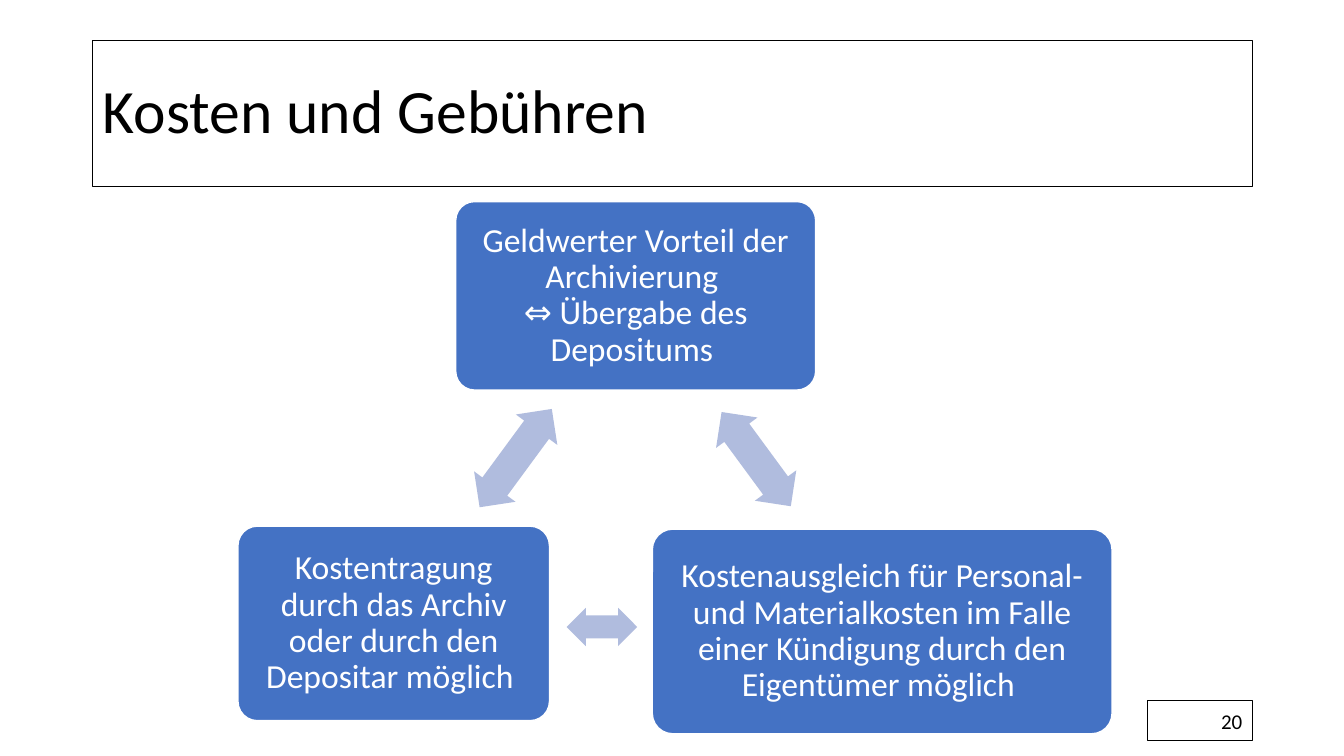
from lxml import etree
from pptx import Presentation
from pptx import util as u
from pptx.dml.color import RGBColor
from pptx.enum import shapes, text
from pptx.oxml import ns

PX = 9144
BLACK = RGBColor(0x00, 0x00, 0x00)
WHITE = RGBColor(0xFF, 0xFF, 0xFF)
BLUE = RGBColor(0x44, 0x72, 0xC4)
PALE_BLUE = RGBColor(0xB0, 0xBC, 0xDE)
FONT = "Calibri"

TOPICS = [
    ((452, 200, 357, 187),
     "Geldwerter Vorteil der Archivierung \v⇔ Übergabe des Depositums "),
    ((647, 525, 456, 203),
     "Kostenausgleich für Personal- und Materialkosten im Falle "
     "einer Kündigung durch den Eigentümer möglich "),
    ((236, 522, 309, 193),
     "Kostentragung durch das Archiv oder durch den Depositar möglich "),
]
ARROWS = [
    ((692, 430, 116, 51), 53.7),
    ((562, 603, 70, 38), 180),
    ((451, 429, 121, 51), 306.3),
]


def px(*lengths):
    return [u.Emu(length * PX) for length in lengths]


def place(shape, box):
    shape.left, shape.top, shape.width, shape.height = px(*box)


def set_text(shape, content, size, color, align, line_spacing=1.0, after=0, inset=None):
    frame = shape.text_frame
    frame.word_wrap = True
    frame.auto_size = text.MSO_AUTO_SIZE.NONE
    frame.vertical_anchor = text.MSO_ANCHOR.MIDDLE
    if inset is not None:
        (margin,) = px(inset)
        frame.margin_left = frame.margin_right = margin
        frame.margin_top = frame.margin_bottom = margin
    paragraph = frame.paragraphs[0]
    paragraph.text = content
    paragraph.alignment = align
    paragraph.line_spacing = line_spacing
    paragraph.space_after = u.Pt(after)
    for run in paragraph.runs:
        run.font.name = FONT
        run.font.size = u.Pt(size)
        run.font.color.rgb = color


def style_frame(shape, line_width):
    shape.fill.solid()
    shape.fill.fore_color.rgb = WHITE
    color = shape.fill._xPr.find(".//" + ns.qn("a:srgbClr"))
    etree.SubElement(color, ns.qn("a:alpha"), val="75000")
    shape.line.color.rgb = BLACK
    shape.line.width = u.Pt(line_width)


def add_shape(slide, kind, box):
    shape = slide.shapes.add_shape(kind, *px(*box))
    shape.shadow.inherit = False
    return shape


def add_title(slide, content):
    title = slide.shapes.title
    place(title, (92, 40, 1150, 145))
    style_frame(title, 1)
    set_text(title, content, 44, BLACK, text.PP_ALIGN.LEFT, line_spacing=0.9)


def add_page_number(slide, number):
    shape = add_shape(slide, shapes.MSO_SHAPE.RECTANGLE, (1138, 695, 104, 40))
    style_frame(shape, 0.75)
    set_text(shape, number, 15, BLACK, text.PP_ALIGN.RIGHT)


def add_topic(slide, box, content):
    shape = add_shape(slide, shapes.MSO_SHAPE.ROUNDED_RECTANGLE, box)
    shape.adjustments[0] = 0.1
    shape.fill.solid()
    shape.fill.fore_color.rgb = BLUE
    shape.line.color.rgb = WHITE
    shape.line.width = u.Pt(1)
    set_text(shape, content, 24, WHITE, text.PP_ALIGN.CENTER,
             line_spacing=0.9, after=8.4, inset=16)


def add_arrow(slide, box, rotation):
    shape = add_shape(slide, shapes.MSO_SHAPE.LEFT_RIGHT_ARROW, box)
    shape.adjustments[0] = 0.6
    shape.adjustments[1] = 0.5
    shape.rotation = rotation
    shape.fill.solid()
    shape.fill.fore_color.rgb = PALE_BLUE
    shape.line.fill.background()


def main():
    presentation = Presentation()
    presentation.slide_width, presentation.slide_height = px(1333, 750)
    slide = presentation.slides.add_slide(presentation.slide_layouts[5])
    add_title(slide, "Kosten und Gebühren")
    add_page_number(slide, "20")
    for box, content in TOPICS:
        add_topic(slide, box, content)
    for box, rotation in ARROWS:
        add_arrow(slide, box, rotation)
    presentation.save("out.pptx")


if __name__ == "__main__":
    main()
